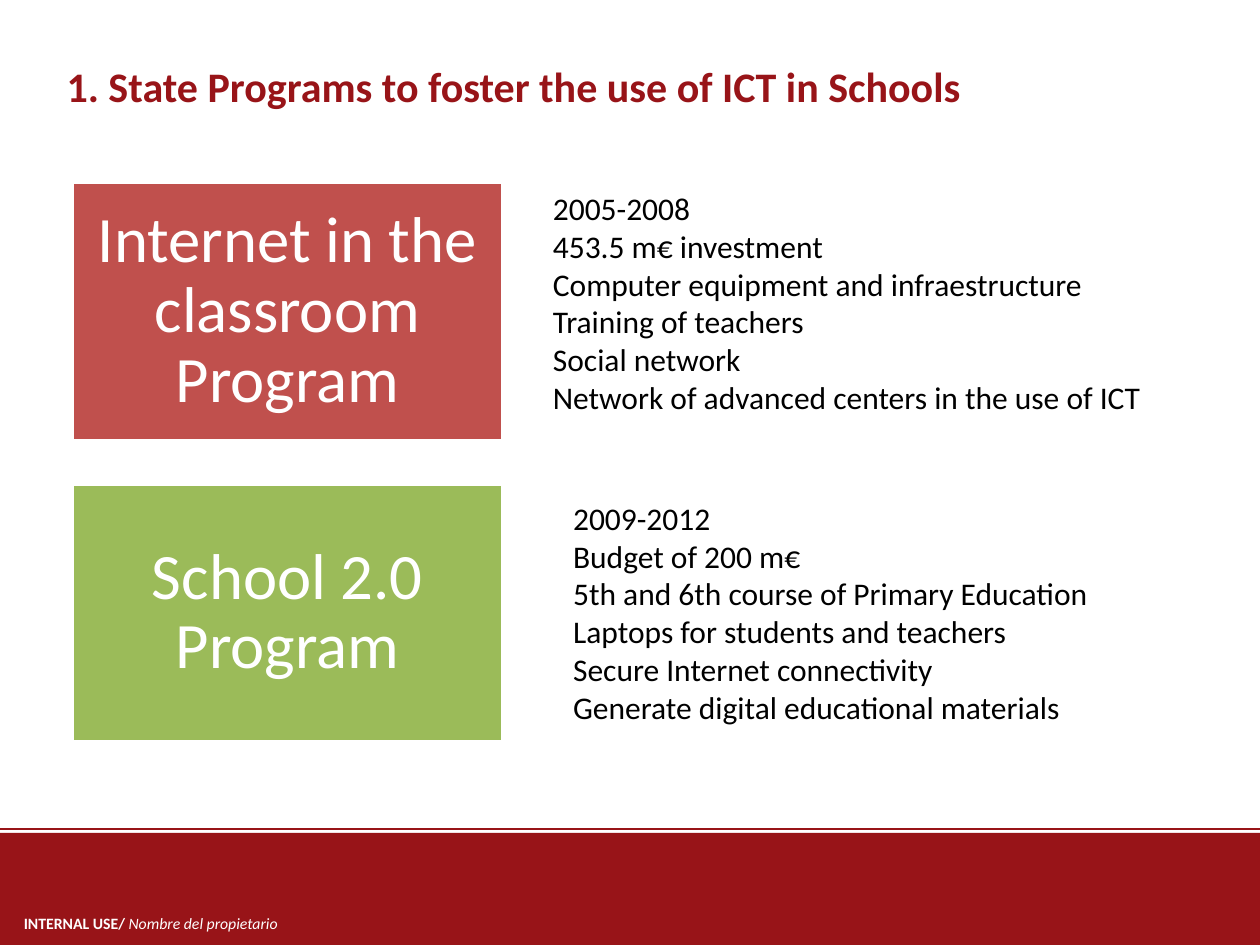
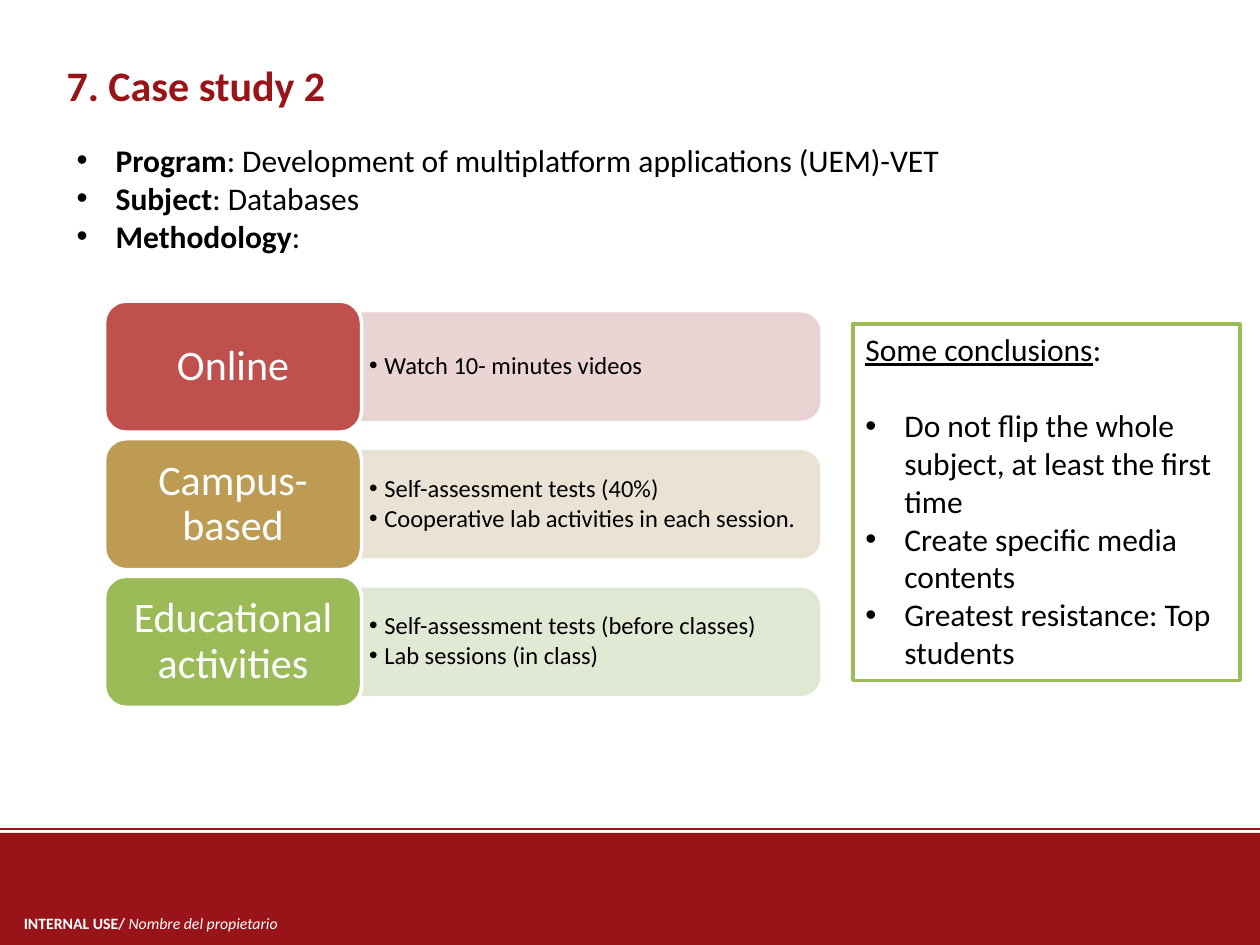
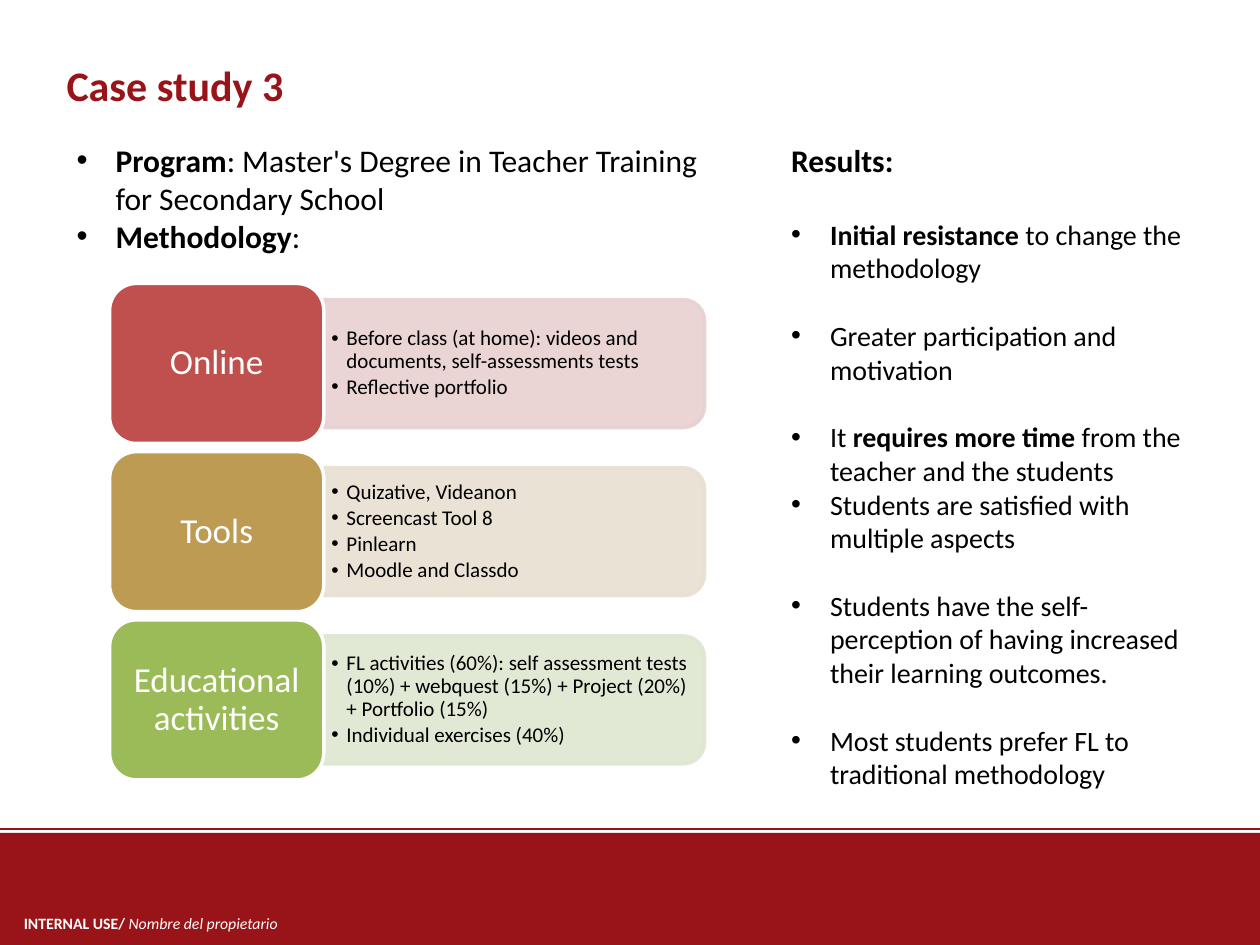
"""Build three slides on school technology programs and case studies."""
from dataclasses import dataclass

from lxml import etree
from pptx import Presentation
from pptx.dml.color import RGBColor
from pptx.enum.shapes import MSO_CONNECTOR, MSO_SHAPE
from pptx.enum.text import MSO_ANCHOR, PP_ALIGN
from pptx.oxml.ns import qn
from pptx.util import Inches, Pt

RECT = MSO_SHAPE.RECTANGLE
ROUND = MSO_SHAPE.ROUNDED_RECTANGLE
HALF = MSO_SHAPE.ROUND_2_SAME_RECTANGLE
LINE = MSO_CONNECTOR.STRAIGHT
MID = MSO_ANCHOR.MIDDLE
TOP = MSO_ANCHOR.TOP
LEFT = PP_ALIGN.LEFT
CENTER = PP_ALIGN.CENTER

WIDE, HIGH = Inches(10), Inches(7.5)
COLS, ROWS = 100, 75
FONT = "Calibri"
HUES = {
    "wine": "981418", "white": "FFFFFF", "black": "000000",
    "red": "C0504D", "gold": "BD9B53", "green": "9BBB59",
    "pink": "E8D0D0", "sand": "E8E1D1", "mint": "DEE7D1",
}
PAIRS = [("red", "pink"), ("gold", "sand"), ("green", "mint")]


@dataclass
class Para:
    """Hold the runs and the layout of one paragraph."""
    runs: list
    size: float = 18
    hue: str = "black"
    gap: float = 0
    after: float = 0
    dent: float = 0
    lead: float = 1
    align: int = LEFT


def plain(text, **look):
    """Make a paragraph of one unmarked run."""
    return Para([(text, "")], **look)


def point(*runs, **look):
    """Make a bulleted paragraph from runs."""
    return Para(list(runs), dent=3.1, **look)


class Deck:
    """Hold the style and the current slide."""

    def __init__(self):
        """Start an empty deck of the right size."""
        self.file = Presentation()
        self.file.slide_width, self.file.slide_height = WIDE, HIGH
        self.slide = None

    def x(self, cols):
        """Turn columns into a length."""
        return round(WIDE * cols / COLS)

    def y(self, rows):
        """Turn rows into a length."""
        return round(HIGH * rows / ROWS)

    def area(self, box):
        """Turn a grid box into lengths."""
        left, top, width, height = box
        return self.x(left), self.y(top), self.x(width), self.y(height)

    def hue(self, name):
        """Look up a colour."""
        return RGBColor.from_string(HUES[name])

    def page(self, title, top=4.2):
        """Start a slide with its title and footer band."""
        self.slide = self.file.slides.add_slide(self.file.slide_layouts[6])
        self.shape(RECT, (0, 66.1, COLS, 8.9), "wine")
        self.rule(65.8)
        self.text((0.9, 72, 23.1, 2.5), [Para(
            [("INTERNAL USE/ ", "b"), ("Nombre del propietario", "i")],
            size=9, hue="white")])
        self.text((4.3, top, 90.6, 5),
                  [Para([(title, "b")], size=24, hue="wine")])

    def rule(self, row):
        """Draw a line across the slide."""
        line = self.slide.shapes.add_connector(
            LINE, 0, self.y(row), WIDE, self.y(row))
        line.line.color.rgb = self.hue("wine")
        line.line.width = Pt(1.5)
        etree.SubElement(line._element.spPr, qn("a:effectLst"))

    def shape(self, kind, box, fill, edge=None):
        """Draw a filled preset shape."""
        shape = self.slide.shapes.add_shape(kind, *self.area(box))
        shape.shadow.inherit = False
        shape.fill.solid()
        shape.fill.fore_color.rgb = self.hue(fill)
        if edge:
            shape.line.color.rgb = self.hue(edge)
            shape.line.width = Pt(2)
        else:
            shape.line.fill.background()
        return shape

    def text(self, box, paras, anchor=TOP, pad=(1, 0.5)):
        """Place a text box."""
        shape = self.slide.shapes.add_textbox(*self.area(box))
        self.put(shape, paras, anchor, pad)

    def put(self, shape, paras, anchor=TOP, pad=(1, 0.5)):
        """Put paragraphs into a shape, run by run."""
        frame = shape.text_frame
        frame.word_wrap = True
        frame.vertical_anchor = anchor
        frame.margin_left = frame.margin_right = self.x(pad[0])
        frame.margin_top = frame.margin_bottom = self.y(pad[1])
        for rank, para in enumerate(paras):
            line = frame.add_paragraph() if rank else frame.paragraphs[0]
            line.alignment = para.align
            line.line_spacing = para.lead
            line.space_after = Pt(para.after)
            if rank:
                line.space_before = Pt(para.gap)
            if para.dent:
                self.dot(line, para.dent)
            for words, marks in para.runs:
                run = line.add_run()
                run.text = words
                font = run.font
                font.name, font.size = FONT, Pt(para.size)
                font.color.rgb = self.hue(para.hue)
                font.bold, font.italic = "b" in marks, "i" in marks
                font.underline = "u" in marks

    def dot(self, line, dent):
        """Give a paragraph a bullet and a hanging indent."""
        props = line._p.get_or_add_pPr()
        props.set("marL", str(self.x(dent)))
        props.set("indent", str(-self.x(dent)))
        etree.SubElement(props, qn("a:buFont"), typeface="Arial")
        etree.SubElement(props, qn("a:buChar"), char="•")

    def card(self, kind, box, fill, label, size, pad):
        """Draw a coloured card with a centred label."""
        shape = self.shape(kind, box, fill, "white")
        self.put(shape, [plain(label, size=size, hue="white", lead=0.9,
                               align=CENTER)], MID, pad)

    def bar(self, box, fill):
        """Draw a pale bar rounded on its right side."""
        left, top, width, height = box
        side = (width - height) / 2
        shape = self.shape(HALF, (left + side, top - side, height, width),
                           fill, fill)
        shape.rotation = 90
        for tint in shape._element.spPr.iter(qn("a:srgbClr")):
            etree.SubElement(tint, qn("a:alpha"), val="90000")

    def stack(self, box, step, items, sizes, pad):
        """Draw a column of cards, each with a bar of points."""
        left, top, width, height = box
        big, small = sizes
        long, thick = width * 16 / 9, height * 0.8
        for rank, (label, points) in enumerate(items):
            deep, pale = PAIRS[rank]
            row = top + rank * step
            start = row + (height - thick) / 2
            self.bar((left + width, start, long, thick), pale)
            self.text(
                (left + width, start + thick * 0.05, long - 0.45, thick * 0.9),
                [plain(item, size=small, dent=1.2, lead=0.9, after=2)
                 for item in points], MID, (0.6, 0.3))
            self.card(ROUND, (left, row, width, height), deep, label, big, pad)


def programs(deck):
    """Build the slide on state programs."""
    deck.page("1. State Programs to foster the use of ICT in Schools", 4.3)
    blocks = [
        ("Internet in the classroom Program", "red", (42.9, 14.5, 50.4, 19.2),
         ["2005-2008", "453.5 m€ investment",
          "Computer equipment and infraestructure", "Training of teachers",
          "Social network", "Network of advanced centers in the use of ICT"]),
        ("School 2.0 Program", "green", (44.5, 39.1, 46.5, 19.2),
         ["2009-2012", "Budget of 200 m€",
          "5th and 6th course of Primary Education",
          "Laptops for students and teachers", "Secure Internet connectivity",
          "Generate digital educational materials"]),
    ]
    for rank, (label, fill, box, facts) in enumerate(blocks):
        deck.card(RECT, (5.7, 14.5 + rank * 23.9, 34.2, 20.5), fill, label,
                  37, (1.5, 1.5))
        deck.text(box, [plain(fact) for fact in facts])


def second(deck):
    """Build the slide on the second case."""
    deck.page("7. Case study 2")
    deck.text((5.1, 10.7, 86.6, 13.1), [
        point(("Program", "b"),
              (": Development of multiplatform applications (UEM)-VET", "")),
        point(("Subject", "b"), (": Databases", "")),
        point(("Methodology", "b"), (":", "")),
    ])
    deck.stack((8.3, 23.9, 20.4, 10.4), 10.92, [
        ("Online", ["Watch 10- minutes videos"]),
        ("Campus-based", ["Self-assessment tests (40%)",
                          "Cooperative lab activities in each session."]),
        ("Educational activities", ["Self-assessment tests (before classes)",
                                    "Lab sessions (in class)"]),
    ], (24, 14), (1, 0.5))
    panel = deck.shape(RECT, (67.7, 25.7, 30.7, 28.3), "white", "green")
    deck.put(panel, [
        Para([("Some conclusions", "u"), (":", "")]),
        point(("Do not flip the whole subject, at least the first time", ""),
              gap=22),
        point(("Create specific media contents", "")),
        point(("Greatest resistance: Top students", "")),
    ])


def third(deck):
    """Build the slide on the third case."""
    deck.page("Case study 3")
    deck.text((5.1, 10.7, 54.3, 13.1), [
        point(("Program", "b"), (": Master's Degree in Teacher Training "
                                 "for Secondary School", "")),
        point(("Methodology", "b"), (":", "")),
    ])
    deck.stack((8.7, 22.5, 17, 12.7), 13.35, [
        ("Online", ["Before class (at home): videos and documents, "
                    "self-assessments tests", "Reflective portfolio"]),
        ("Tools", ["Quizative, Videanon", "Screencast Tool 8", "Pinlearn",
                   "Moodle and Classdo"]),
        ("Educational activities", [
            "FL activities (60%): self assessment tests (10%) + webquest "
            "(15%) + Project (20%) + Portfolio (15%)",
            "Individual exercises (40%)"]),
    ], (20, 12), (0.8, 0.4))
    results = [
        (22, [("Initial resistance ", "b"), ("to change the methodology", "")]),
        (19.5, [("Greater participation and motivation", "")]),
        (19.5, [("It ", ""), ("requires more time ", "b"),
                ("from the teacher and the students", "")]),
        (0, [("Students are satisfied with multiple aspects", "")]),
        (19.5, [("Students have the self-perception of having increased "
                 "their learning outcomes.", "")]),
        (19.5, [("Most students prefer FL to traditional methodology", "")]),
    ]
    deck.text((61.8, 10.7, 33.1, 52.8), [Para([("Results:", "b")])] + [
        point(*runs, size=16, gap=gap) for gap, runs in results])


def main():
    """Build and save the deck."""
    deck = Deck()
    for build in (programs, second, third):
        build(deck)
    deck.file.save("out.pptx")


if __name__ == "__main__":
    main()
